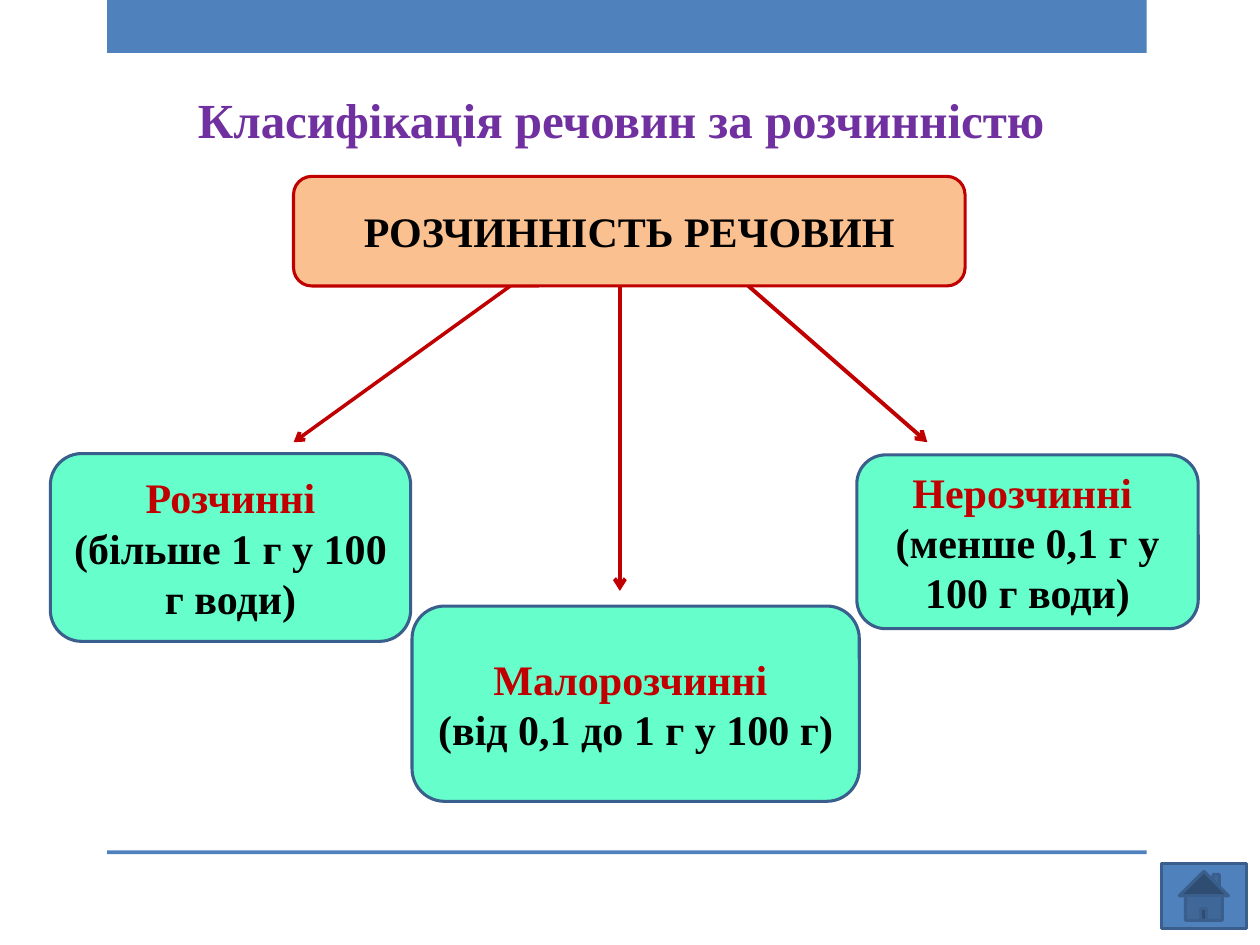
from dataclasses import dataclass

from lxml.etree import SubElement
from pptx import Presentation
from pptx.dml.color import RGBColor
from pptx.enum.shapes import MSO_CONNECTOR, MSO_SHAPE
from pptx.enum.text import MSO_ANCHOR, MSO_AUTO_SIZE, PP_ALIGN
from pptx.oxml.ns import qn
from pptx.shapes.autoshape import Shape
from pptx.slide import Slide
from pptx.util import Emu, Pt

EMU_PER_PX = 9144  # 100 px to the inch


@dataclass(frozen=True)
class Theme:
    font: str = "Times New Roman"
    title_size: int = 28
    body_size: int = 24
    outline: float = 1.75
    blue: str = "4F81BD"
    dark_blue: str = "3A5F8C"
    purple: str = "7030A0"
    red: str = "C00000"
    orange: str = "FAC090"
    mint: str = "66FFCC"
    black: str = "000000"


THEME = Theme()


@dataclass(frozen=True)
class Area:
    left: int
    top: int
    width: int
    height: int

    def emu(self) -> tuple[Emu, ...]:
        return tuple(px(n) for n in (self.left, self.top, self.width, self.height))


@dataclass(frozen=True)
class Line:
    text: str
    color: str


@dataclass(frozen=True)
class Box:
    area: Area
    fill: str
    outline: str
    lines: tuple[Line, ...]


@dataclass(frozen=True)
class Arrow:
    start: tuple[int, int]
    end: tuple[int, int]
    width: float


def category(area: Area, name: str, limit: str) -> Box:
    lines = (Line(name, THEME.red), Line(limit, THEME.black))
    return Box(area, THEME.mint, THEME.dark_blue, lines)


TITLE = "Класифікація речовин за розчинністю"
TITLE_AREA = Area(147, 66, 749, 57)
BARS = (Area(85, 0, 825, 42), Area(85, 675, 825, 3))
HOME_AREA = Area(922, 685, 67, 52)
ARROWS = (
    Arrow((405, 227), (233, 351), 2),
    Arrow((492, 227), (492, 469), 2.25),
    Arrow((594, 227), (736, 351), 2.25),
)
BOXES = (
    Box(Area(233, 140, 533, 87), THEME.orange, THEME.red,
        (Line("РОЗЧИННІСТЬ РЕЧОВИН", THEME.black),)),
    category(Area(40, 360, 286, 149), "Розчинні", "(більше 1 г у 100 г води)"),
    category(Area(327, 481, 355, 155), "Малорозчинні ", "(від 0,1 до 1 г у 100 г)"),
    category(Area(680, 361, 271, 138), "Нерозчинні ", "(менше 0,1 г у 100 г води)"),
)


def px(n: int) -> Emu:
    return Emu(n * EMU_PER_PX)


def rgb(color: str) -> RGBColor:
    return RGBColor.from_string(color)


def set_font(p, size: int, color: str) -> None:
    p.font.name = THEME.font
    p.font.size = Pt(size)
    p.font.bold = True
    p.font.color.rgb = rgb(color)


def add_filled(s: Slide, kind: MSO_SHAPE, area: Area, fill: str,
               outline: str | None = None) -> Shape:
    sp = s.shapes.add_shape(kind, *area.emu())
    sp.shadow.inherit = False
    sp.fill.solid()
    sp.fill.fore_color.rgb = rgb(fill)
    if outline:
        sp.line.color.rgb = rgb(outline)
        sp.line.width = Pt(THEME.outline)
    else:
        sp.line.fill.background()
    return sp


def add_title(s: Slide) -> None:
    title = s.shapes.title
    title.left, title.top, title.width, title.height = TITLE_AREA.emu()
    tf = title.text_frame
    tf.text = TITLE
    tf.word_wrap = True
    tf.auto_size = MSO_AUTO_SIZE.SHAPE_TO_FIT_TEXT
    tf.vertical_anchor = MSO_ANCHOR.TOP
    p = tf.paragraphs[0]
    p.alignment = PP_ALIGN.LEFT
    set_font(p, THEME.title_size, THEME.purple)


def add_box(s: Slide, box: Box) -> None:
    sp = add_filled(s, MSO_SHAPE.ROUNDED_RECTANGLE, box.area, box.fill, box.outline)
    tf = sp.text_frame
    tf.word_wrap = True
    tf.vertical_anchor = MSO_ANCHOR.MIDDLE
    tf.text = "\n".join(line.text for line in box.lines)
    for p, line in zip(tf.paragraphs, box.lines):
        p.alignment = PP_ALIGN.CENTER
        set_font(p, THEME.body_size, line.color)


def add_arrow(s: Slide, arrow: Arrow) -> None:
    ends = (px(n) for n in arrow.start + arrow.end)
    cxn = s.shapes.add_connector(MSO_CONNECTOR.STRAIGHT, *ends)
    cxn.line.color.rgb = rgb(THEME.red)
    cxn.line.width = Pt(arrow.width)
    SubElement(cxn.line._get_or_add_ln(), qn("a:tailEnd"), type="arrow")
    SubElement(cxn._element.spPr, qn("a:effectLst"))


def main() -> None:
    prs = Presentation()
    prs.slide_width, prs.slide_height = px(1000), px(750)
    s = prs.slides.add_slide(prs.slide_layouts.get_by_name("Title Only"))
    for bar in BARS:
        add_filled(s, MSO_SHAPE.RECTANGLE, bar, THEME.blue)
    add_title(s)
    for arrow in ARROWS:
        add_arrow(s, arrow)
    for box in BOXES:
        add_box(s, box)
    add_filled(s, MSO_SHAPE.ACTION_BUTTON_HOME, HOME_AREA, THEME.blue, THEME.dark_blue)
    prs.save("out.pptx")


if __name__ == "__main__":
    main()
